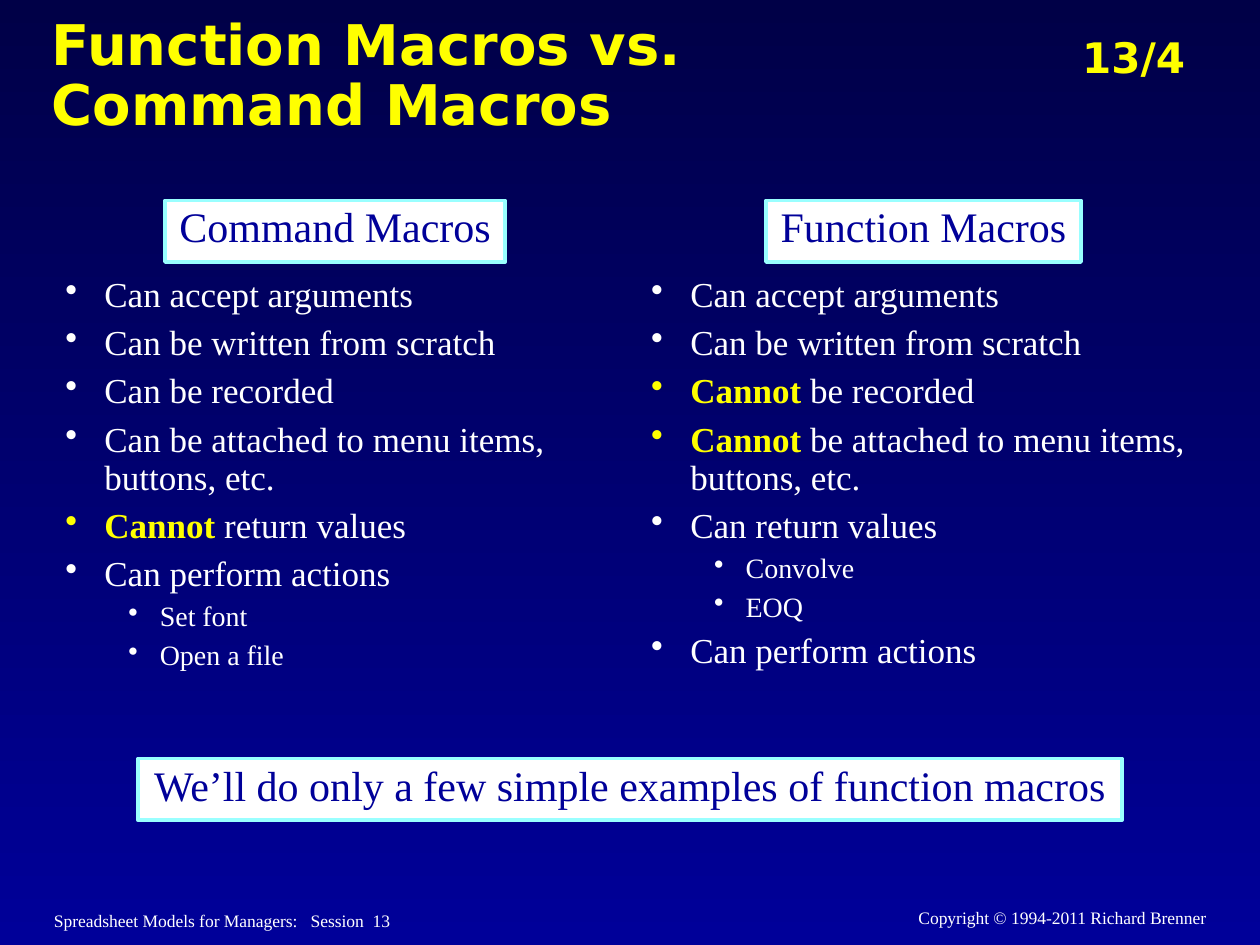
from dataclasses import dataclass

from lxml import etree
from pptx import Presentation
from pptx.dml.color import RGBColor
from pptx.enum.shapes import MSO_SHAPE
from pptx.enum.text import MSO_ANCHOR, MSO_AUTO_SIZE, PP_ALIGN
from pptx.oxml.ns import qn
from pptx.util import Inches, Pt

LEFT, CENTER, RIGHT = PP_ALIGN.LEFT, PP_ALIGN.CENTER, PP_ALIGN.RIGHT
TOP, MIDDLE = MSO_ANCHOR.TOP, MSO_ANCHOR.MIDDLE
RECTANGLE = MSO_SHAPE.RECTANGLE
TITLE_ONLY = 5


@dataclass(frozen=True)
class Theme:
    sky_top: str = "000047"
    sky_bottom: str = "000099"
    text: str = "FFFFFF"
    accent: str = "FFFF00"
    border: str = "99FFFF"
    heading_font: str = "DejaVu Sans"
    body_font: str = "Times New Roman"
    title_size: int = 32
    callout_size: int = 24
    level_sizes: tuple = (20, 16)
    footer_size: int = 10


THEME = Theme()
WIDTH, HEIGHT = 10, 7.5

TITLE = "Function Macros vs.\vCommand Macros"
PAGE_NUMBER = "13/4"
SESSION = "Spreadsheet Models for Managers:   Session  13"
COPYRIGHT = "Copyright © 1994-2011 Richard Brenner"
CONCLUSION = "We’ll do only a few simple examples of function macros"
EMPHASIS = "Cannot"

# Each column: heading, heading centre and width, then (level, text) items
COLUMNS = [
    ("Command Macros", 2.66, 2.7, [
        (0, "Can accept arguments"),
        (0, "Can be written from scratch"),
        (0, "Can be recorded"),
        (0, "Can be attached to menu items, buttons, etc."),
        (0, "Cannot return values"),
        (0, "Can perform actions"),
        (1, "Set font"),
        (1, "Open a file"),
    ]),
    ("Function Macros", 7.33, 2.5, [
        (0, "Can accept arguments"),
        (0, "Can be written from scratch"),
        (0, "Cannot be recorded"),
        (0, "Cannot be attached to menu items, buttons, etc."),
        (0, "Can return values"),
        (1, "Convolve"),
        (1, "EOQ"),
        (0, "Can perform actions"),
    ]),
]
COLUMN_LEFT, COLUMN_PITCH, COLUMN_WIDTH = 0.42, 4.65, 4.49
COLUMN_TOP, COLUMN_HEIGHT = 2.15, 4.92
HEADING_TOP, CONCLUSION_TOP = 1.59, 6.02
CALLOUT_HEIGHT, CONCLUSION_WIDTH = 0.49, 7.81
INDENTS = [(0.31, 0.31), (0.75, 0.25)]  # text margin and hanging indent
SPACE_SHARE = 0.3  # space before a bullet, as a share of its type size


def inches(*lengths):
    return [Inches(length) for length in lengths]


def format_span(span, size, color=THEME.text, font=THEME.body_font, bold=False):
    span.font.size = Pt(size)
    span.font.name = font
    span.font.bold = bold
    span.font.color.rgb = RGBColor.from_string(color)


def write(shape, text, align=LEFT, anchor=TOP, wrap=True, line_spacing=1.0, **style):
    """Fill a shape with one paragraph; style goes to format_span."""
    frame = shape.text_frame
    frame.text = text
    frame.word_wrap = wrap
    frame.auto_size = MSO_AUTO_SIZE.NONE
    frame.vertical_anchor = anchor
    para = frame.paragraphs[0]
    para.alignment = align
    para.line_spacing = line_spacing
    for span in para.runs:
        format_span(span, **style)


def add_label(page, box, text, **style):
    write(page.shapes.add_textbox(*inches(*box)), text, **style)


def add_callout(page, text, center, top, width):
    box = inches(center - width / 2, top, width, CALLOUT_HEIGHT)
    shape = page.shapes.add_shape(RECTANGLE, *box)
    shape.shadow.inherit = False
    shape.fill.solid()
    shape.fill.fore_color.rgb = RGBColor.from_string(THEME.text)
    shape.line.color.rgb = RGBColor.from_string(THEME.border)
    shape.line.width = Pt(2)
    write(shape, text, align=CENTER, wrap=False, line_spacing=0.9,
          size=THEME.callout_size, color=THEME.sky_bottom)


def add_bullet(para, level):
    margin, hanging = INDENTS[level]
    properties = para._p.get_or_add_pPr()
    properties.set("marL", str(Inches(margin)))
    properties.set("indent", str(-Inches(hanging)))
    etree.SubElement(properties, qn("a:buChar")).set("char", "•")


def add_bullets(page, left, items):
    box = page.shapes.add_textbox(*inches(left, COLUMN_TOP, COLUMN_WIDTH, COLUMN_HEIGHT))
    frame = box.text_frame
    frame.word_wrap = True
    for index, (level, text) in enumerate(items):
        para = frame.add_paragraph() if index else frame.paragraphs[0]
        size = THEME.level_sizes[level]
        para.level = level
        add_bullet(para, level)
        para.line_spacing = 0.9
        if index:
            para.space_before = Pt(size * SPACE_SHARE)
        before, emphasis, rest = text.rpartition(EMPHASIS)
        for part in filter(None, (before, emphasis, rest)):
            strong = part == EMPHASIS
            span = para.add_run()
            span.text = part
            format_span(span, size, THEME.accent if strong else THEME.text, bold=strong)


def paint_background(page):
    fill = page.background.fill
    fill.gradient()
    fill.gradient_angle = 270
    for stop, color in zip(fill.gradient_stops, (THEME.sky_top, THEME.sky_bottom)):
        stop.color.rgb = RGBColor.from_string(color)


def main():
    deck = Presentation()
    deck.slide_width, deck.slide_height = inches(WIDTH, HEIGHT)
    page = deck.slides.add_slide(deck.slide_layouts[TITLE_ONLY])
    paint_background(page)

    title = page.shapes.title
    title.left, title.top, title.width, title.height = inches(0.31, 0.15, 7.69, 0.93)
    heading = dict(font=THEME.heading_font, color=THEME.accent, bold=True)
    write(title, TITLE, anchor=MIDDLE, line_spacing=0.9, size=THEME.title_size, **heading)
    add_label(page, (8.49, 0.2, 1.55, 0.5), PAGE_NUMBER, wrap=False,
              size=THEME.callout_size, **heading)

    for index, (name, center, width, items) in enumerate(COLUMNS):
        add_bullets(page, COLUMN_LEFT + index * COLUMN_PITCH, items)
        add_callout(page, name, center, HEADING_TOP, width)
    add_callout(page, CONCLUSION, WIDTH / 2, CONCLUSION_TOP, CONCLUSION_WIDTH)

    add_label(page, (0.33, 7.17, 5.55, 0.26), SESSION, size=THEME.footer_size)
    add_label(page, (6.52, 7.15, 3.15, 0.26), COPYRIGHT, align=RIGHT, size=THEME.footer_size)
    deck.save("out.pptx")


if __name__ == "__main__":
    main()
